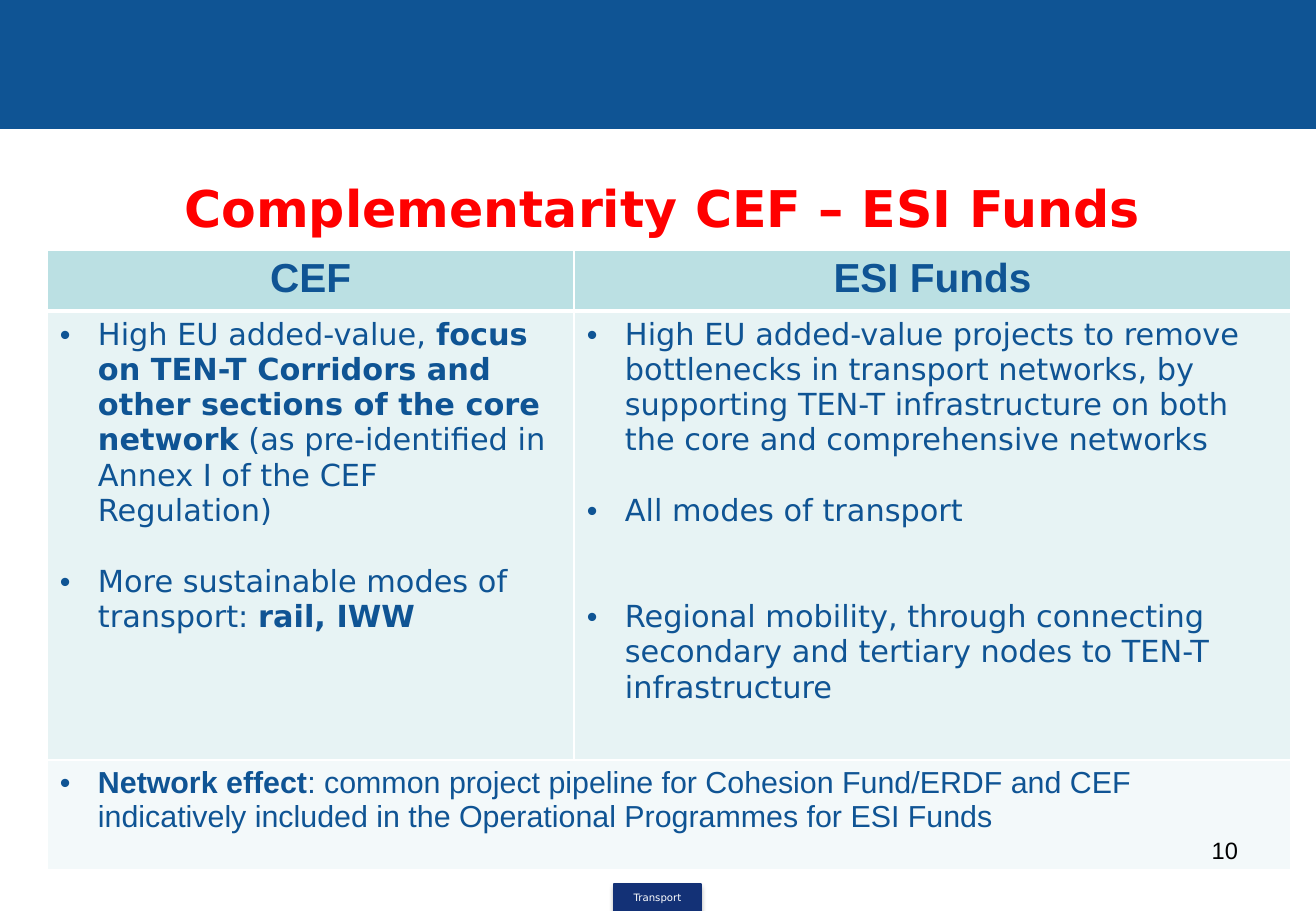
from lxml.etree import SubElement
from pptx import Presentation
from pptx.dml.color import RGBColor
from pptx.enum.shapes import MSO_SHAPE
from pptx.enum.text import MSO_ANCHOR, PP_ALIGN
from pptx.oxml.ns import qn
from pptx.util import Pt

EMU_PER_PX = 7526
BLUE = RGBColor(0x0F, 0x54, 0x94)
NAVY = RGBColor(0x13, 0x31, 0x76)
RED = RGBColor(0xFF, 0x00, 0x00)
WHITE = RGBColor(0xFF, 0xFF, 0xFF)
BLACK = RGBColor(0x00, 0x00, 0x00)
HEADER_FILL = RGBColor(0xBB, 0xE0, 0xE3)
BODY_FILL = RGBColor(0xE7, 0xF3, 0xF4)
FOOTER_FILL = RGBColor(0xF3, 0xF9, 0xFA)

TITLE = "Complementarity CEF – ESI Funds"
HEADERS = ["CEF", "ESI Funds"]
# Each bullet: blank lines of space before it, then (text, bold) runs
CEF_BULLETS = [
    (0, [("High EU added-value, ", False),
         ("focus on TEN-T Corridors and other sections of the core network", True),
         (" (as pre-identified in Annex I of the CEF Regulation)", False)]),
    (1, [("More sustainable modes of transport: ", False), ("rail, IWW", True)]),
]
ESI_BULLETS = [
    (0, [("High EU added-value projects to remove bottlenecks in transport networks, "
          "by supporting TEN-T infrastructure on both the core and comprehensive networks",
          False)]),
    (1, [("All modes of transport", False)]),
    (2, [("Regional mobility, through connecting secondary and tertiary nodes to "
          "TEN-T infrastructure", False)]),
]
NETWORK_BULLETS = [
    (0, [("Network effect", True),
         (": common project pipeline for Cohesion Fund/ERDF and CEF indicatively "
          "included in the Operational Programmes for ESI Funds", False)]),
]

TITLE_FORMAT = {"name": "DejaVu Sans", "size": Pt(30), "bold": True, "color": RED}
HEADER_FORMAT = {"name": "Arial", "size": Pt(24), "bold": True, "color": BLUE}
BODY_FORMAT = {"name": "DejaVu Sans", "size": Pt(18), "color": BLUE}
NETWORK_FORMAT = {**BODY_FORMAT, "name": "Arial"}
LABEL_FORMAT = {"name": "DejaVu Sans", "size": Pt(6), "color": WHITE}
NUMBER_FORMAT = {"name": "Arial", "size": Pt(14), "color": BLACK}

COLUMN_WIDTHS = [527, 717]
ROW_HEIGHTS = [61, 449, 110]
BULLET_INDENT = 38
BLANK_LINE = Pt(21)
CELL_MARGINS = {"margin_left": 13, "margin_right": 13, "margin_top": 6, "margin_bottom": 6}


def px(*lengths):
    return [length * EMU_PER_PX for length in lengths]


def add_run(paragraph, text, text_format):
    run = paragraph.add_run()
    run.text = text
    for name, value in text_format.items():
        if name == "color":
            run.font.color.rgb = value
        else:
            setattr(run.font, name, value)


def write_line(text_frame, text, text_format, alignment):
    paragraph = text_frame.paragraphs[0]
    paragraph.alignment = alignment
    add_run(paragraph, text, text_format)


def write_bullets(text_frame, bullets, text_format):
    for index, (blank_lines, runs) in enumerate(bullets):
        paragraph = text_frame.add_paragraph() if index else text_frame.paragraphs[0]
        properties = paragraph._p.get_or_add_pPr()
        properties.set("marL", str(BULLET_INDENT * EMU_PER_PX))
        properties.set("indent", str(-BULLET_INDENT * EMU_PER_PX))
        SubElement(properties, qn("a:buFont"), typeface="Arial")
        SubElement(properties, qn("a:buChar"), char="•")
        if blank_lines:
            paragraph.space_before = blank_lines * BLANK_LINE
        for text, bold in runs:
            add_run(paragraph, text, {**text_format, "bold": bold})


def add_rectangle(slide, box, color):
    shape = slide.shapes.add_shape(MSO_SHAPE.RECTANGLE, *px(*box))
    shape.shadow.inherit = False
    shape.fill.solid()
    shape.fill.fore_color.rgb = color
    shape.line.color.rgb = color
    shape.line.width = Pt(0.75)
    return shape


def add_line_of_text(slide, box, text, text_format, alignment, anchor):
    text_frame = slide.shapes.add_textbox(*px(*box)).text_frame
    text_frame.word_wrap = True
    text_frame.vertical_anchor = anchor
    write_line(text_frame, text, text_format, alignment)


def add_soft_shadow(shape):
    effects = shape._element.spPr.find(qn("a:effectLst"))
    shadow = SubElement(effects, qn("a:outerShdw"), blurRad="40000", dist="23000",
                        dir="5400000", rotWithShape="0")
    color = SubElement(shadow, qn("a:srgbClr"), val=str(BLACK))
    SubElement(color, qn("a:alpha"), val="35000")


def style_cell(cell, row, fill):
    for name, margin in CELL_MARGINS.items():
        setattr(cell, name, margin * EMU_PER_PX)
    widths = {"lnL": 1, "lnR": 1, "lnT": 3 if row == 1 else 1, "lnB": 3 if row == 0 else 1}
    properties = cell._tc.get_or_add_tcPr()
    for side, width in widths.items():
        border = SubElement(properties, qn(f"a:{side}"), w=str(Pt(width)))
        SubElement(SubElement(border, qn("a:solidFill")), qn("a:srgbClr"), val=str(WHITE))
    cell.fill.solid()
    cell.fill.fore_color.rgb = fill


def add_funds_table(slide):
    box = px(47, 250, sum(COLUMN_WIDTHS), sum(ROW_HEIGHTS))
    table = slide.shapes.add_table(len(ROW_HEIGHTS), len(COLUMN_WIDTHS), *box).table
    table.first_row = table.horz_banding = False
    for column, width in zip(table.columns, px(*COLUMN_WIDTHS)):
        column.width = width
    for row, height in zip(table.rows, px(*ROW_HEIGHTS)):
        row.height = height
    for row, fill in enumerate([HEADER_FILL, BODY_FILL, FOOTER_FILL]):
        for column in range(len(COLUMN_WIDTHS)):
            style_cell(table.cell(row, column), row, fill)
    for column, (header, bullets) in enumerate(zip(HEADERS, [CEF_BULLETS, ESI_BULLETS])):
        write_line(table.cell(0, column).text_frame, header, HEADER_FORMAT, PP_ALIGN.CENTER)
        write_bullets(table.cell(1, column).text_frame, bullets, BODY_FORMAT)
    network_cell = table.cell(2, 0)
    network_cell.merge(table.cell(2, 1))
    write_bullets(network_cell.text_frame, NETWORK_BULLETS, NETWORK_FORMAT)


def main():
    presentation = Presentation()
    presentation.slide_width, presentation.slide_height = px(1316, 911)
    slide = presentation.slides.add_slide(presentation.slide_layouts[6])

    add_rectangle(slide, (0, 0, 1316, 128), BLUE)
    label = add_rectangle(slide, (614, 884, 87, 27), NAVY)
    add_soft_shadow(label)
    label.text_frame.vertical_anchor = MSO_ANCHOR.MIDDLE
    write_line(label.text_frame, "Transport", LABEL_FORMAT, PP_ALIGN.CENTER)

    add_line_of_text(slide, (66, 179, 1193, 57), TITLE, TITLE_FORMAT,
                     PP_ALIGN.CENTER, MSO_ANCHOR.MIDDLE)
    add_funds_table(slide)
    add_line_of_text(slide, (943, 830, 307, 63), "10", NUMBER_FORMAT,
                     PP_ALIGN.RIGHT, MSO_ANCHOR.TOP)
    presentation.save("out.pptx")


if __name__ == "__main__":
    main()
